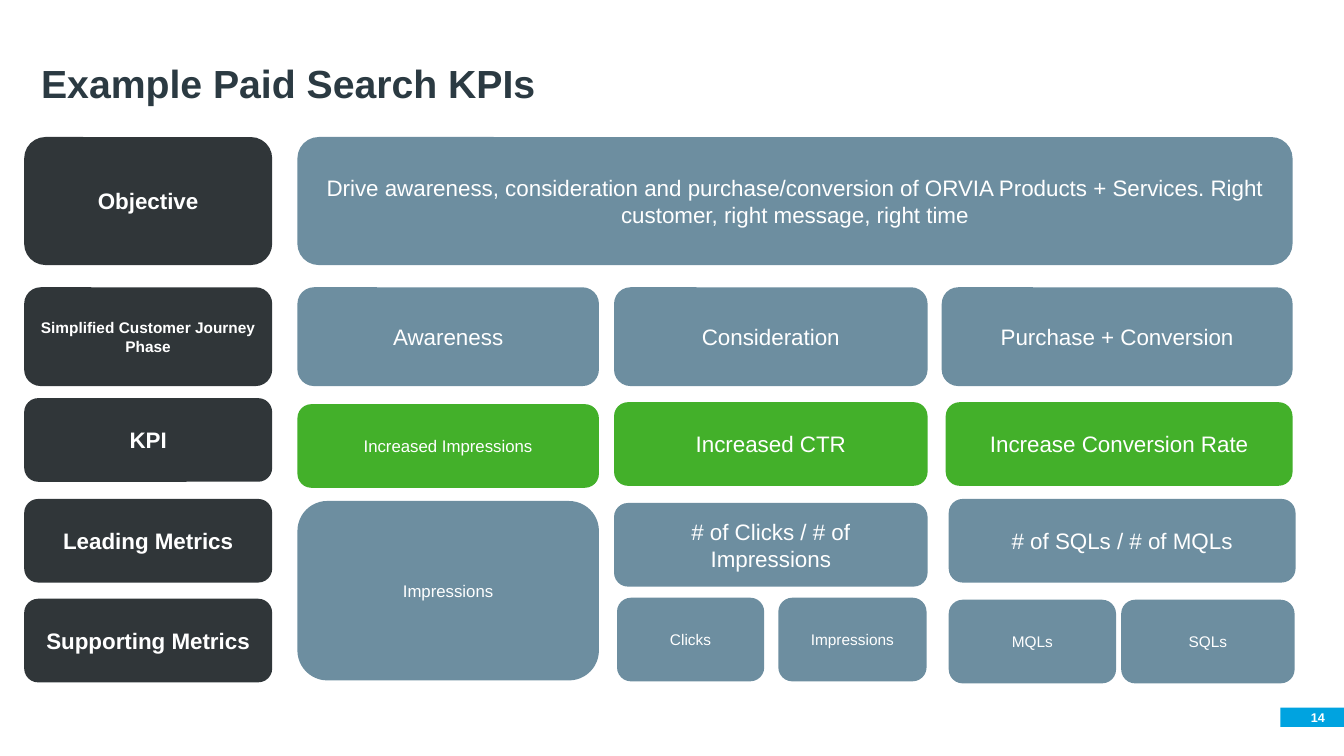
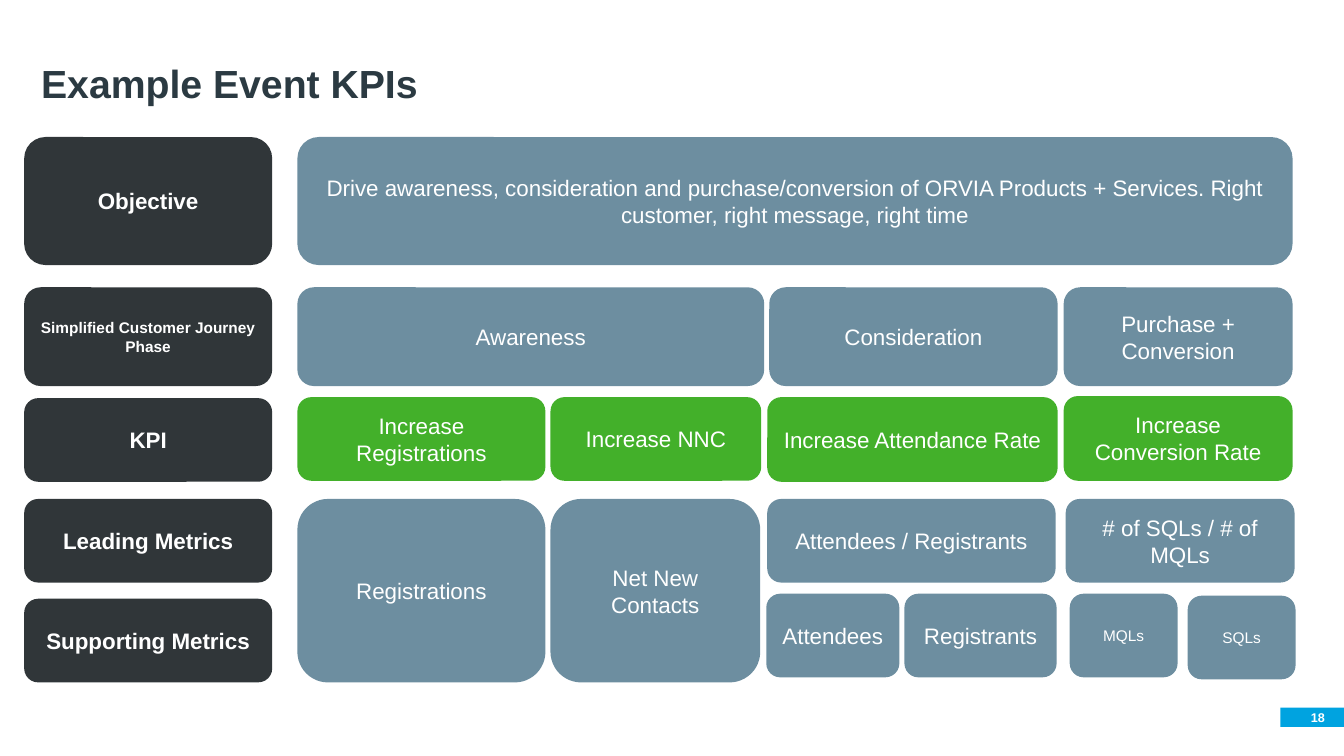
from dataclasses import dataclass

from pptx import Presentation
from pptx.dml.color import RGBColor
from pptx.enum.shapes import MSO_SHAPE as Preset
from pptx.enum.text import MSO_ANCHOR as Anchor, PP_ALIGN as Align
from pptx.util import Inches, Pt

WHITE = RGBColor(0xFF, 0xFF, 0xFF)
TITLE_INK = RGBColor(0x2B, 0x3A, 0x42)
CHARCOAL = RGBColor(0x30, 0x36, 0x39)
SLATE = RGBColor(0x6D, 0x8E, 0xA0)
GREEN = RGBColor(0x43, 0xB0, 0x2A)
CYAN = RGBColor(0x00, 0xA3, 0xE0)

FONT = "Arial"
ROW_HEIGHT = 0.83
OBJECTIVE_TOP, OBJECTIVE_HEIGHT = 1.36, 1.27
PHASE_TOP, PHASE_HEIGHT = 2.85, 0.98
LABEL_LEFT, LABEL_WIDTH = 0.24, 2.46
GRID_LEFT, GRID_WIDTH = 2.95, 9.87


@dataclass(frozen=True)
class Card:
    text: str
    left: float
    top: float
    width: float
    height: float = ROW_HEIGHT
    size: int = 16
    fill: RGBColor = SLATE
    bold: bool = False


@dataclass(frozen=True)
class KpiSlide:
    title: str
    number: int
    cards: list[Card]


def label(text: str, top: float, height: float = ROW_HEIGHT, size: int = 16) -> Card:
    return Card(text, LABEL_LEFT, top, LABEL_WIDTH, height, size, CHARCOAL, True)


def phase(text: str, left: float, width: float) -> Card:
    return Card(text, left, PHASE_TOP, width, PHASE_HEIGHT)


def kpi(text: str, left: float, top: float, width: float,
        height: float = ROW_HEIGHT, size: int = 16) -> Card:
    return Card(text, left, top, width, height, size, GREEN)


SHARED_CARDS = [
    label("Objective", OBJECTIVE_TOP, OBJECTIVE_HEIGHT),
    label("Simplified Customer Journey Phase", PHASE_TOP, PHASE_HEIGHT, 11),
    label("KPI", 3.95),
    label("Leading Metrics", 4.95),
    label("Supporting Metrics", 5.94),
    Card("Drive awareness, consideration and purchase/conversion of ORVIA "
         "Products + Services. Right customer, right message, right time",
         GRID_LEFT, OBJECTIVE_TOP, GRID_WIDTH, OBJECTIVE_HEIGHT),
]

KPI_SLIDES = [
    KpiSlide("Example Paid Search KPIs", 14, [
        phase("Awareness", GRID_LEFT, 2.99),
        phase("Consideration", 6.09, 3.11),
        phase("Purchase + Conversion", 9.34, 3.48),
        kpi("Increased Impressions", GRID_LEFT, 4.01, 2.99, size=12),
        kpi("Increased CTR", 6.09, 3.99, 3.11),
        kpi("Increase Conversion Rate", 9.38, 3.99, 3.44),
        Card("Impressions", GRID_LEFT, 4.97, 2.99, 1.78, 12),
        Card("# of Clicks / # of Impressions", 6.09, 4.99, 3.11),
        Card("# of SQLs / # of MQLs", 9.41, 4.95, 3.44),
        Card("Clicks", 6.12, 5.93, 1.46, size=11),
        Card("Impressions", 7.72, 5.93, 1.47, size=11),
        Card("MQLs", 9.41, 5.95, 1.66, size=11),
        Card("SQLs", 11.12, 5.95, 1.72, size=11),
    ]),
    KpiSlide("Example Event KPIs", 18, [
        phase("Awareness", GRID_LEFT, 4.63),
        phase("Consideration", 7.63, 2.86),
        phase("Purchase + Conversion", 10.55, 2.27),
        kpi("Increase Registrations", GRID_LEFT, 3.94, 2.46),
        kpi("Increase NNC", 5.46, 3.94, 2.09),
        kpi("Increase Attendance Rate", 7.61, 3.94, 2.88, 0.84),
        kpi("Increase Conversion Rate", 10.55, 3.93, 2.27, 0.84),
        Card("Registrations", GRID_LEFT, 4.95, 2.46, 1.82),
        Card("Net New Contacts", 5.46, 4.95, 2.08, 1.82),
        Card("Attendees / Registrants", 7.61, 4.95, 2.86),
        Card("# of SQLs / # of MQLs", 10.57, 4.95, 2.27),
        Card("Attendees", 7.6, 5.89, 1.32),
        Card("Registrants", 8.97, 5.89, 1.51),
        Card("MQLs", 10.61, 5.89, 1.07, size=11),
        Card("SQLs", 11.78, 5.91, 1.07, size=11),
    ]),
]


def write_text(shape, text: str, *, size: int, color: RGBColor = WHITE,
               bold: bool = False, align: Align = Align.CENTER,
               anchor: Anchor = Anchor.MIDDLE, line_spacing: float = 1.0,
               margin: float | None = None) -> None:
    frame = shape.text_frame
    frame.word_wrap = True
    frame.vertical_anchor = anchor
    if margin is not None:
        frame.margin_left = frame.margin_right = Inches(margin)
        frame.margin_top = frame.margin_bottom = Inches(margin)
    paragraph = frame.paragraphs[0]
    paragraph.alignment = align
    paragraph.line_spacing = line_spacing
    run = paragraph.add_run()
    run.text = text
    run.font.name = FONT
    run.font.size = Pt(size)
    run.font.bold = bold
    run.font.color.rgb = color


def add_block(slide, preset: Preset, left: float, top: float, width: float,
              height: float, fill: RGBColor):
    shape = slide.shapes.add_shape(
        preset, Inches(left), Inches(top), Inches(width), Inches(height))
    shape.shadow.inherit = False
    shape.fill.solid()
    shape.fill.fore_color.rgb = fill
    shape.line.fill.background()
    return shape


def add_text_box(slide, left: float, top: float, width: float, height: float):
    return slide.shapes.add_textbox(
        Inches(left), Inches(top), Inches(width), Inches(height))


def draw_frame(slide, title: str, number: int) -> None:
    add_block(slide, Preset.RECTANGLE, 12.7, 7.02, 0.63, 0.19, CYAN)
    write_text(add_text_box(slide, 12.7, 7.02, 0.44, 0.19), str(number),
               size=9, bold=True, align=Align.RIGHT, margin=0)
    write_text(add_text_box(slide, 0.31, 0.27, 12.51, 0.84), title,
               size=28, color=TITLE_INK, bold=True, align=Align.LEFT,
               anchor=Anchor.BOTTOM, line_spacing=0.9)


def draw_card(slide, card: Card) -> None:
    shape = add_block(slide, Preset.ROUNDED_RECTANGLE, card.left, card.top,
                      card.width, card.height, card.fill)
    write_text(shape, card.text, size=card.size, bold=card.bold)


def main() -> None:
    presentation = Presentation()
    presentation.slide_width = Inches(13.33)
    presentation.slide_height = Inches(7.5)
    blank_layout = presentation.slide_layouts[6]
    for kpi_slide in KPI_SLIDES:
        slide = presentation.slides.add_slide(blank_layout)
        draw_frame(slide, kpi_slide.title, kpi_slide.number)
        for card in SHARED_CARDS + kpi_slide.cards:
            draw_card(slide, card)
    presentation.save("out.pptx")


if __name__ == "__main__":
    main()
